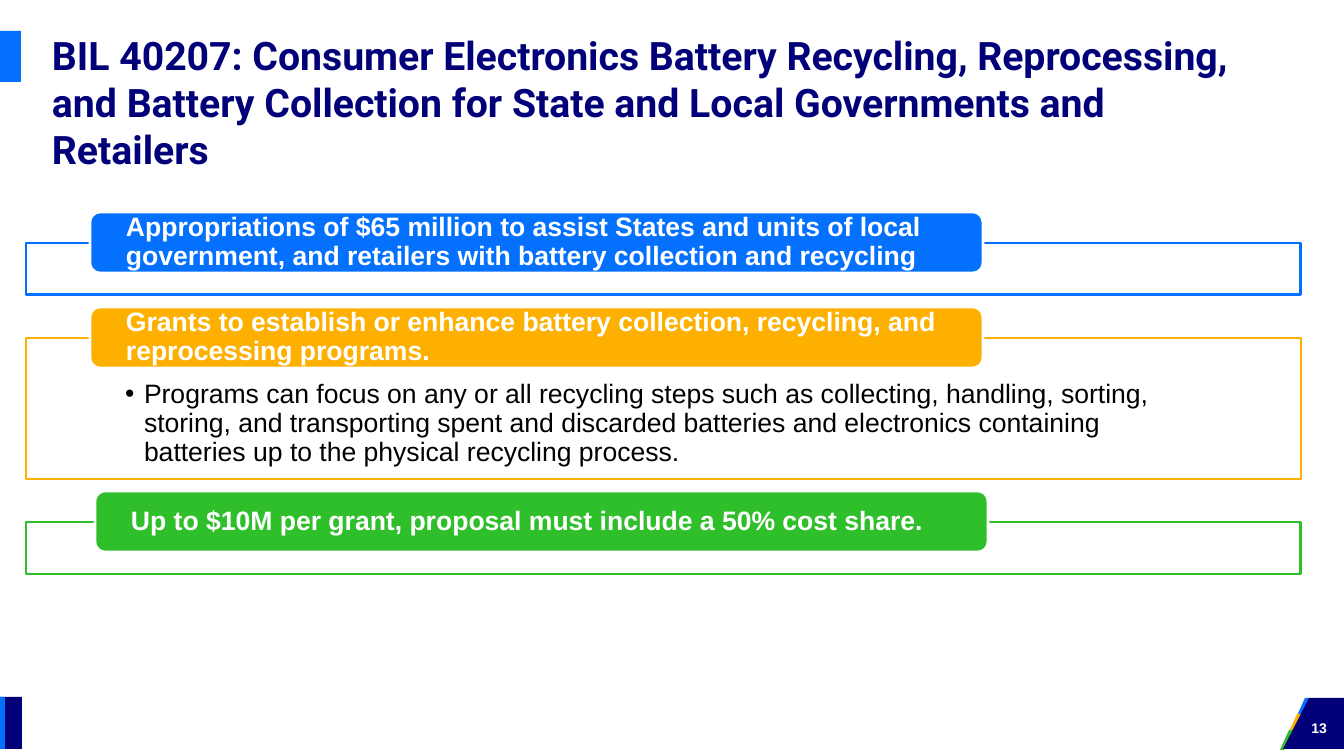
"""Builds the BIL 40207 battery recycling slide."""
from dataclasses import dataclass

from lxml.etree import SubElement
from pptx import Presentation
from pptx.dml.color import RGBColor
from pptx.enum.shapes import MSO_SHAPE as Shape
from pptx.enum.text import MSO_ANCHOR as Anchor, MSO_AUTO_SIZE as AutoSize, PP_ALIGN as Align
from pptx.oxml.ns import qn
from pptx.util import Pt

TITLE = ("BIL 40207: Consumer Electronics Battery Recycling, Reprocessing, and Battery "
         "Collection for State and Local Governments and Retailers")
PAGE = "13"


@dataclass(frozen=True)
class Theme:
    navy: str = "020078"
    blue: str = "0371FE"
    amber: str = "FEB000"
    green: str = "2FBF2B"
    white: str = "FFFFFF"
    black: str = "000000"
    heading: str = "Roboto"
    body: str = "Arial"
    title_size: int = 28
    text_size: int = 19
    page_size: int = 10


THEME = Theme()

SECTIONS = [
    dict(color=THEME.blue, tab_left=90, height=52, detail=None,
         heading="Appropriations of $65 million to assist States and units of local "
                 "government, and retailers with battery collection and recycling"),
    dict(color=THEME.amber, tab_left=90, height=141,
         heading="Grants to establish or enhance battery collection, recycling, "
                 "and reprocessing programs.",
         detail="Programs can focus on any or all recycling steps such as collecting, "
                "handling, sorting, storing, and transporting spent and discarded batteries "
                "and electronics containing batteries up to the physical recycling process."),
    dict(color=THEME.green, tab_left=95, height=52, detail=None,
         heading="Up to $10M per grant, proposal must include a 50% cost share."),
]

PX = 914400 / 100.8
PANEL_LEFT, PANEL_TOP, PANEL_WIDTH, PANEL_GAP = 26, 243, 1275, 43
TAB_WIDTH, TAB_HEIGHT, TAB_RISE = 893, 61, 31
BARS = [(0, 697, 22, 52, THEME.navy), (0, 697, 5, 52, THEME.blue), (0, 31, 21, 51, THEME.blue)]
STRIPE = [(9, 0), (14, 0), (4, 20), (0, 20)]
STRIPE_LEFT, STRIPE_TOP, STRIPE_DX, STRIPE_DY = 1296, 698, -8, 16
BADGE = [(1283, 749), (1344, 749), (1344, 698), (1309, 698)]


def emu(px):
    return round(px * PX)


def place(shape, left, top, width, height):
    shape.left, shape.top, shape.width, shape.height = map(emu, (left, top, width, height))


def paint(shape, fill, line=None):
    shape.fill.solid()
    shape.fill.fore_color.rgb = RGBColor.from_string(fill)
    if line:
        shape.line.color.rgb = RGBColor.from_string(line)
        shape.line.width = Pt(2)
    else:
        shape.line.fill.background()


def block(shapes, kind, box, fill, line=None):
    shape = shapes.add_shape(kind, *map(emu, box))
    shape.shadow.inherit = False
    paint(shape, fill, line)
    return shape


def outline(shapes, points, fill):
    builder = shapes.build_freeform(*points[0], scale=PX)
    builder.add_line_segments(points[1:], close=True)
    shape = builder.convert_to_shape()
    shape.shadow.inherit = False
    paint(shape, fill)


def write(shape, text, *, size, color, font=THEME.body, bold=True, align=Align.LEFT,
          anchor=Anchor.MIDDLE, insets=(0, 0, 0, 0), spacing=1.0, bullet_indent=0):
    frame = shape.text_frame
    frame.word_wrap = True
    frame.auto_size = AutoSize.NONE
    frame.vertical_anchor = anchor
    (frame.margin_left, frame.margin_top,
     frame.margin_right, frame.margin_bottom) = map(emu, insets)
    paragraph = frame.paragraphs[0]
    paragraph.alignment = align
    paragraph.line_spacing = spacing
    paragraph.space_before = Pt(0)
    if bullet_indent:
        properties = paragraph._p.get_or_add_pPr()
        properties.set("marL", str(emu(bullet_indent)))
        properties.set("indent", str(-emu(bullet_indent)))
        SubElement(properties, qn("a:buChar")).set("char", "•")
    run = paragraph.add_run()
    run.text = text
    run.font.name, run.font.size, run.font.bold = font, Pt(size), bold
    run.font.color.rgb = RGBColor.from_string(color)


def add_sections(shapes, detail_panel):
    top = PANEL_TOP
    for section in SECTIONS:
        color, height = section["color"], section["height"]
        panel_box = (PANEL_LEFT, top, PANEL_WIDTH, height)
        if section["detail"]:
            place(detail_panel, *panel_box)
            paint(detail_panel, THEME.white, color)
            write(detail_panel, section["detail"], size=THEME.text_size, color=THEME.black,
                  bold=False, anchor=Anchor.TOP, insets=(99, 43, 99, 15), spacing=0.9,
                  bullet_indent=19)
        else:
            block(shapes, Shape.RECTANGLE, panel_box, THEME.white, color)
        tab = block(shapes, Shape.ROUNDED_RECTANGLE,
                    (section["tab_left"], top - TAB_RISE, TAB_WIDTH, TAB_HEIGHT),
                    color, THEME.white)
        write(tab, section["heading"], size=THEME.text_size, color=THEME.white,
              insets=(33, 0, 33, 0), spacing=0.9)
        top += height + PANEL_GAP


def add_frame(shapes):
    for i, color in enumerate((THEME.blue, THEME.amber, THEME.green)):
        left, top = STRIPE_LEFT + i * STRIPE_DX, STRIPE_TOP + i * STRIPE_DY
        outline(shapes, [(left + x, top + y) for x, y in STRIPE], color)
    outline(shapes, BADGE, THEME.navy)
    for *box, color in BARS:
        block(shapes, Shape.RECTANGLE, box, color)
    page = shapes.add_textbox(*map(emu, (1281, 719, 56, 17)))
    write(page, PAGE, size=THEME.page_size, color=THEME.white, align=Align.RIGHT,
          insets=(10, 0, 10, 0))


def main():
    deck = Presentation()
    deck.slide_width, deck.slide_height = emu(1344), emu(756)
    slide = deck.slides.add_slide(deck.slide_layouts[1])
    title, detail_panel = slide.placeholders
    place(title, 42, 31, 1198, 142)
    write(title, TITLE, size=THEME.title_size, color=THEME.navy, font=THEME.heading,
          anchor=Anchor.TOP, insets=(10, 0, 10, 0))
    add_frame(slide.shapes)
    add_sections(slide.shapes, detail_panel)
    deck.save("out.pptx")


if __name__ == "__main__":
    main()
